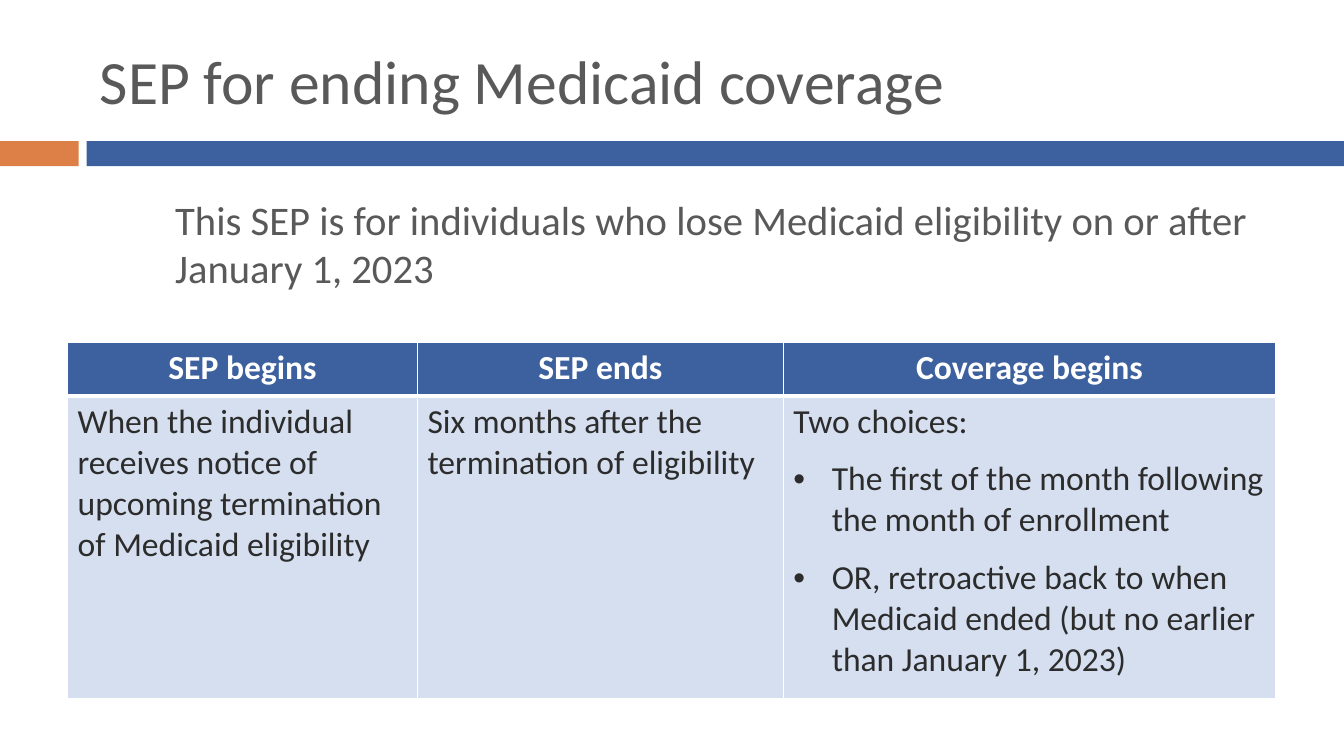
from dataclasses import dataclass
from typing import Any

import lxml.etree
import pptx
import pptx.dml.color
import pptx.enum.shapes
import pptx.enum.text
import pptx.oxml
import pptx.oxml.ns
import pptx.util

RGBColor = pptx.dml.color.RGBColor
BLUE = RGBColor(0x3C, 0x61, 0x9E)
ORANGE = RGBColor(0xDD, 0x80, 0x47)
PALE_BLUE = RGBColor(0xD5, 0xDF, 0xEF)
GREY = RGBColor(0x59, 0x59, 0x59)
INK = RGBColor(0x2C, 0x2C, 0x2C)
WHITE = RGBColor(0xFF, 0xFF, 0xFF)

SLIDE_WIDTH = pptx.util.Inches(13.33)
SLIDE_HEIGHT = pptx.util.Inches(7.5)
BULLET_INDENT = pptx.util.Inches(0.38)
HEADER_RULE = 3
CELL_RULE = 1

LEFT = pptx.enum.text.PP_ALIGN.LEFT
CENTER = pptx.enum.text.PP_ALIGN.CENTER
TITLE_FONT = {"name": "Calibri", "size": pptx.util.Pt(44), "bold": False}
INTRO_FONT = {"name": "Calibri", "size": pptx.util.Pt(29), "bold": False}
HEADER_FONT = {"name": "Calibri", "size": pptx.util.Pt(24), "bold": True}
CELL_FONT = HEADER_FONT | {"bold": False}
FRAME_FORMAT = {"word_wrap": True, "auto_size": pptx.enum.text.MSO_AUTO_SIZE.NONE}


@dataclass(frozen=True)
class Area:
    """A rectangle in percent of the slide's width and height."""
    left: float
    top: float
    width: float
    height: float

    def box(self) -> tuple[int, int, int, int]:
        return (across(self.left), down(self.top),
                across(self.width), down(self.height))


@dataclass(frozen=True)
class Band:
    area: Area
    color: RGBColor


@dataclass(frozen=True)
class Line:
    text: str
    space_after: int = 0
    bulleted: bool = False


@dataclass(frozen=True)
class Column:
    width: float
    heading: str
    lines: tuple[Line, ...]


TITLE_AREA = Area(6.68, 3.33, 89.2, 14.4)
INTRO_AREA = Area(12.3, 25.07, 85.45, 14.4)
BANDS = (
    Band(Area(0, 18.67, 5.85, 3.33), ORANGE),
    Band(Area(6.45, 18.67, 93.55, 3.33), BLUE),
)
TABLE_LEFT, TABLE_TOP = 5.03, 45.33
ROW_HEIGHTS = (7.07, 40)
COLUMNS = (
    Column(26.03, "SEP begins", (
        Line("When the individual receives notice of upcoming termination "
             "of Medicaid eligibility"),)),
    Column(27.23, "SEP ends", (
        Line("Six months after the termination of eligibility"),)),
    Column(36.61, "Coverage begins", (
        Line("Two choices:", 12),
        Line("The first of the month following the month of enrollment", 12, True),
        Line("OR, retroactive back to when Medicaid ended "
             "(but no earlier than January 1, 2023)", 12, True))),
)


def across(percent: float) -> int:
    return round(SLIDE_WIDTH * percent / 100)


def down(percent: float) -> int:
    return round(SLIDE_HEIGHT * percent / 100)


def apply(target: Any, values: dict[str, Any]) -> None:
    for attribute, value in values.items():
        setattr(target, attribute, value)


def write(paragraph: Any, text: str, font: dict[str, Any], color: RGBColor,
          alignment: Any = LEFT) -> None:
    paragraph.text = text
    paragraph.alignment = alignment
    for run in paragraph.runs:
        apply(run.font, font)
        run.font.color.rgb = color


def add_bullet(paragraph: Any) -> None:
    properties = paragraph._p.get_or_add_pPr()
    properties.set("marL", str(BULLET_INDENT))
    properties.set("indent", str(-BULLET_INDENT))
    for tag, key, value in (("a:buFont", "typeface", "Arial"),
                            ("a:buChar", "char", "•")):
        lxml.etree.SubElement(properties, pptx.oxml.ns.qn(tag)).set(key, value)


def rule_cell(cell: Any, top: float, bottom: float) -> None:
    """Give the cell white borders; call it before the cell is filled."""
    properties = cell._tc.get_or_add_tcPr()
    widths = {"lnL": CELL_RULE, "lnR": CELL_RULE, "lnT": top, "lnB": bottom}
    for side, width in widths.items():
        properties.append(pptx.oxml.parse_xml(
            f'<a:{side} {pptx.oxml.ns.nsdecls("a")} w="{pptx.util.Pt(width)}">'
            f'<a:solidFill><a:srgbClr val="{WHITE}"/></a:solidFill></a:{side}>'))


def fill_cell(cell: Any, color: RGBColor) -> None:
    cell.fill.solid()
    cell.fill.fore_color.rgb = color


def draw_band(slide: Any, band: Band) -> None:
    bar = slide.shapes.add_shape(
        pptx.enum.shapes.MSO_SHAPE.RECTANGLE, *band.area.box())
    bar.shadow.inherit = False
    bar.fill.solid()
    bar.fill.fore_color.rgb = band.color
    bar.line.fill.background()


def draw_title(slide: Any) -> None:
    title = slide.shapes.title
    apply(title, dict(zip(("left", "top", "width", "height"), TITLE_AREA.box())))
    apply(title.text_frame, FRAME_FORMAT | {
        "vertical_anchor": pptx.enum.text.MSO_ANCHOR.MIDDLE})
    write(title.text_frame.paragraphs[0], "SEP for ending Medicaid coverage",
          TITLE_FONT, GREY)


def draw_intro(slide: Any) -> None:
    frame = slide.shapes.add_textbox(*INTRO_AREA.box()).text_frame
    apply(frame, FRAME_FORMAT)
    write(frame.paragraphs[0],
          "This SEP is for individuals who lose Medicaid eligibility on or after "
          "\nJanuary 1, 2023", INTRO_FONT, GREY)


def draw_table(slide: Any) -> None:
    area = Area(TABLE_LEFT, TABLE_TOP,
                sum(column.width for column in COLUMNS), sum(ROW_HEIGHTS))
    table = slide.shapes.add_table(
        len(ROW_HEIGHTS), len(COLUMNS), *area.box()).table
    for row, height in zip(table.rows, ROW_HEIGHTS):
        row.height = down(height)
    for index, column in enumerate(COLUMNS):
        table.columns[index].width = across(column.width)

        header = table.cell(0, index)
        rule_cell(header, CELL_RULE, HEADER_RULE)
        fill_cell(header, BLUE)
        write(header.text_frame.paragraphs[0], column.heading,
              HEADER_FONT, WHITE, CENTER)

        detail = table.cell(1, index)
        rule_cell(detail, HEADER_RULE, CELL_RULE)
        fill_cell(detail, PALE_BLUE)
        frame = detail.text_frame
        for position, line in enumerate(column.lines):
            paragraph = frame.add_paragraph() if position else frame.paragraphs[0]
            write(paragraph, line.text, CELL_FONT, INK)
            paragraph.space_after = pptx.util.Pt(line.space_after)
            if line.bulleted:
                add_bullet(paragraph)


def main() -> None:
    deck = pptx.Presentation()
    apply(deck, {"slide_width": SLIDE_WIDTH, "slide_height": SLIDE_HEIGHT})
    slide = deck.slides.add_slide(deck.slide_layouts.get_by_name("Title Only"))
    for band in BANDS:
        draw_band(slide, band)
    draw_title(slide)
    draw_intro(slide)
    draw_table(slide)
    deck.save("out.pptx")


if __name__ == "__main__":
    main()
